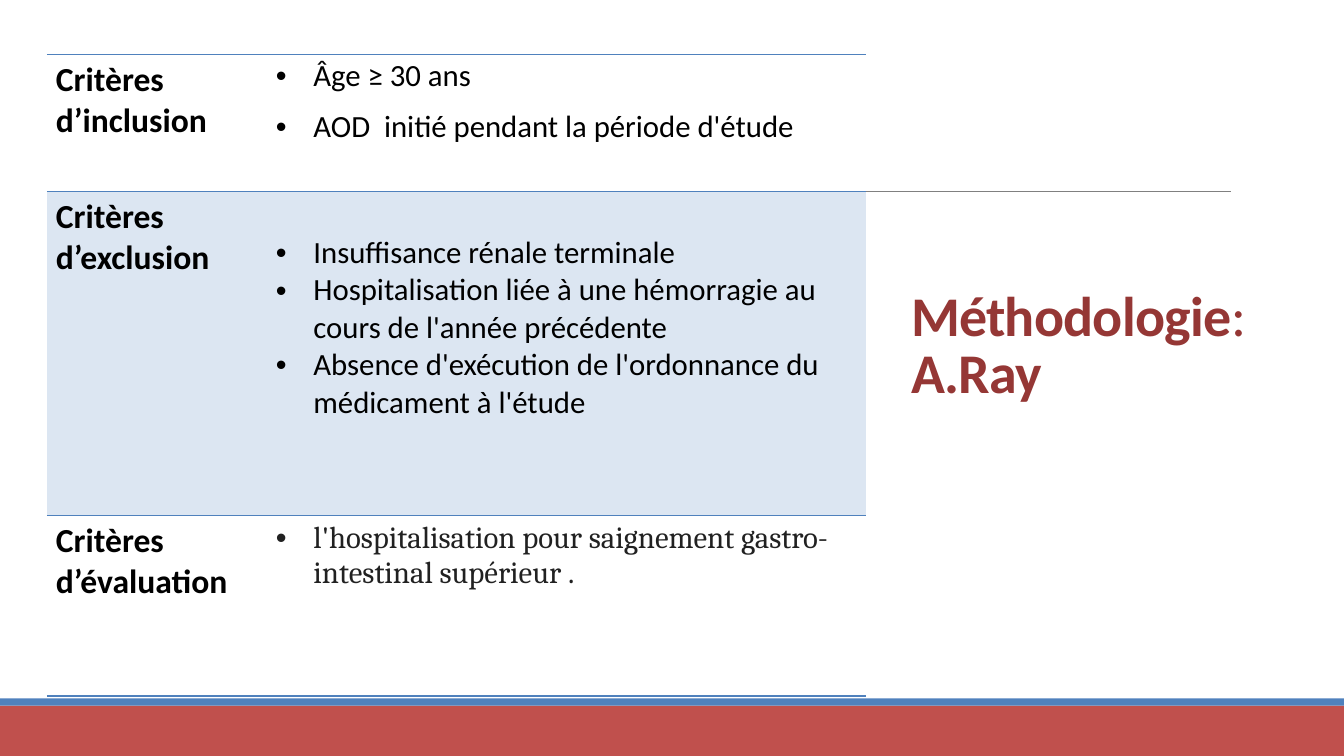
from lxml import etree
from pptx import Presentation
from pptx.dml.color import RGBColor
from pptx.enum.shapes import MSO_CONNECTOR as CONN, MSO_SHAPE as SHAPE
from pptx.enum.text import MSO_ANCHOR as ANCHOR
from pptx.oxml import parse_xml
from pptx.oxml.ns import nsdecls, qn
from pptx.util import Cm, Pt

BLACK = RGBColor(0x00, 0x00, 0x00)
INK = RGBColor(0x21, 0x21, 0x21)
GREY = RGBColor(0x80, 0x80, 0x80)
RED = RGBColor(0xC0, 0x50, 0x4D)
DARK_RED = RGBColor(0x95, 0x37, 0x35)
BLUE = RGBColor(0x4F, 0x81, 0xBD)
PALE_BLUE = RGBColor(0xDC, 0xE6, 0xF2)

PLAIN_TABLE = "{2D5ABB26-0587-4C30-8999-92F81FD0307C}"
SLIDE_W, SLIDE_H = Cm(33.87), Cm(19.05)
INDENT = Cm(0.95)

CRITERIA = [
    dict(head=["Critères d’inclusion"], height=Cm(3.46), edges=["T", "B"],
         items=["Âge ≥ 30 ans", "AOD  initié pendant la période d'étude"],
         top=Cm(0), look=dict(spacing=1.07, after=8)),
    dict(head=["Critères d’exclusion"], height=Cm(8.16), edges=["T"], fill=PALE_BLUE,
         items=["Insuffisance rénale terminale",
                "Hospitalisation liée à une hémorragie au cours de l'année précédente",
                "Absence d'exécution de l'ordonnance du médicament à l'étude"],
         top=Cm(1.07), look={}),
    dict(head=["Critères", "d’évaluation"], height=Cm(4.55), edges=["B"],
         items=["l'hospitalisation pour saignement gastro-intestinal supérieur ."],
         top=Cm(0.12), look=dict(font="Cambria", color=INK)),
]


def add_run(p, text, size=22, bold=False, color=BLACK, font="Calibri", tracking=None):
    r = p.add_run()
    r.text = text
    r.font.size, r.font.bold, r.font.name = Pt(size), bold, font
    r.font.color.rgb = color
    if tracking is not None:
        r._r.get_or_add_rPr().set("spc", str(int(tracking * 100)))


def add_bullet(p):
    pPr = p._p.get_or_add_pPr()
    pPr.set("marL", str(INDENT))
    pPr.set("indent", str(-INDENT))
    etree.SubElement(pPr, qn("a:buFont")).set("typeface", "Arial")
    etree.SubElement(pPr, qn("a:buChar")).set("char", "•")


def write_lines(tf, lines, bullets=False, spacing=None, after=0, **look):
    for i, line in enumerate(lines):
        p = tf.paragraphs[0] if i == 0 else tf.add_paragraph()
        p.line_spacing, p.space_after = spacing, Pt(after)
        if bullets:
            add_bullet(p)
        add_run(p, line, **look)


def set_edges(cell, edges):
    """Rule the given sides (T, B) of a cell in blue."""
    tcPr = cell._tc.get_or_add_tcPr()
    for i, side in enumerate(edges):
        tcPr.insert(i, parse_xml(
            f'<a:ln{side} {nsdecls("a")} w="12700"><a:solidFill>'
            f'<a:srgbClr val="{BLUE}"/></a:solidFill></a:ln{side}>'))


def add_bar(s, x, y, w, h, color):
    bar = s.shapes.add_shape(SHAPE.RECTANGLE, x, y, w, h)
    bar.shadow.inherit = False
    bar.fill.solid()
    bar.fill.fore_color.rgb = color
    bar.line.fill.background()


def add_footer(s, x, y, w, h):
    stripe_h = Cm(0.18)
    add_bar(s, x, y + stripe_h, w, h - stripe_h, RED)
    add_bar(s, x, y, w, stripe_h, BLUE)


def add_rule(s, x, y, w):
    rule = s.shapes.add_connector(CONN.STRAIGHT, x, y, x + w, y)
    rule.line.color.rgb, rule.line.width = GREY, Pt(0.5)
    etree.SubElement(rule._element.spPr, qn("a:effectLst"))


def add_title(s, x, y, w, h):
    tf = s.shapes.add_textbox(x, y, w, h).text_frame
    tf.word_wrap, tf.vertical_anchor = True, ANCHOR.MIDDLE
    p = tf.paragraphs[0]
    p.line_spacing = 0.85
    look = dict(size=40, color=DARK_RED, tracking=-0.5)
    add_run(p, "Méthodologie", bold=True, **look)
    add_run(p, ":", **look)
    p.add_line_break()
    add_run(p, "A.Ray", bold=True, **look)


def add_criteria_table(s, x, y, w, h):
    table = s.shapes.add_table(len(CRITERIA), 2, x, y, w, h).table
    table.first_row = table.horz_banding = False
    table._tbl.tblPr.find(qn("a:tableStyleId")).text = PLAIN_TABLE
    head_w = Cm(5.54)
    table.columns[0].width, table.columns[1].width = head_w, w - head_w
    for i, row in enumerate(CRITERIA):
        table.rows[i].height = row["height"]
        head, body = table.cell(i, 0), table.cell(i, 1)
        for cell in (head, body):
            cell.margin_left = cell.margin_right = Cm(0.23)
            cell.margin_top = cell.margin_bottom = Cm(0.12)
            if "fill" in row:
                cell.fill.solid()
                cell.fill.fore_color.rgb = row["fill"]
            else:
                cell.fill.background()
            set_edges(cell, row["edges"])
        body.margin_top = row["top"]
        write_lines(head.text_frame, row["head"], size=24, bold=True)
        write_lines(body.text_frame, row["items"], bullets=True, **row["look"])


def main():
    prs = Presentation()
    prs.slide_width, prs.slide_height = SLIDE_W, SLIDE_H
    s = prs.slides.add_slide(prs.slide_layouts[6])
    footer_h = Cm(1.45)
    add_footer(s, 0, SLIDE_H - footer_h, SLIDE_W, footer_h)
    add_rule(s, Cm(3.33), Cm(4.83), Cm(27.68))
    add_title(s, Cm(22.71), Cm(1.75), Cm(9.37), Cm(14.05))
    add_criteria_table(s, Cm(1.18), Cm(1.37), Cm(20.65), Cm(16.17))
    prs.save("out.pptx")


if __name__ == "__main__":
    main()
